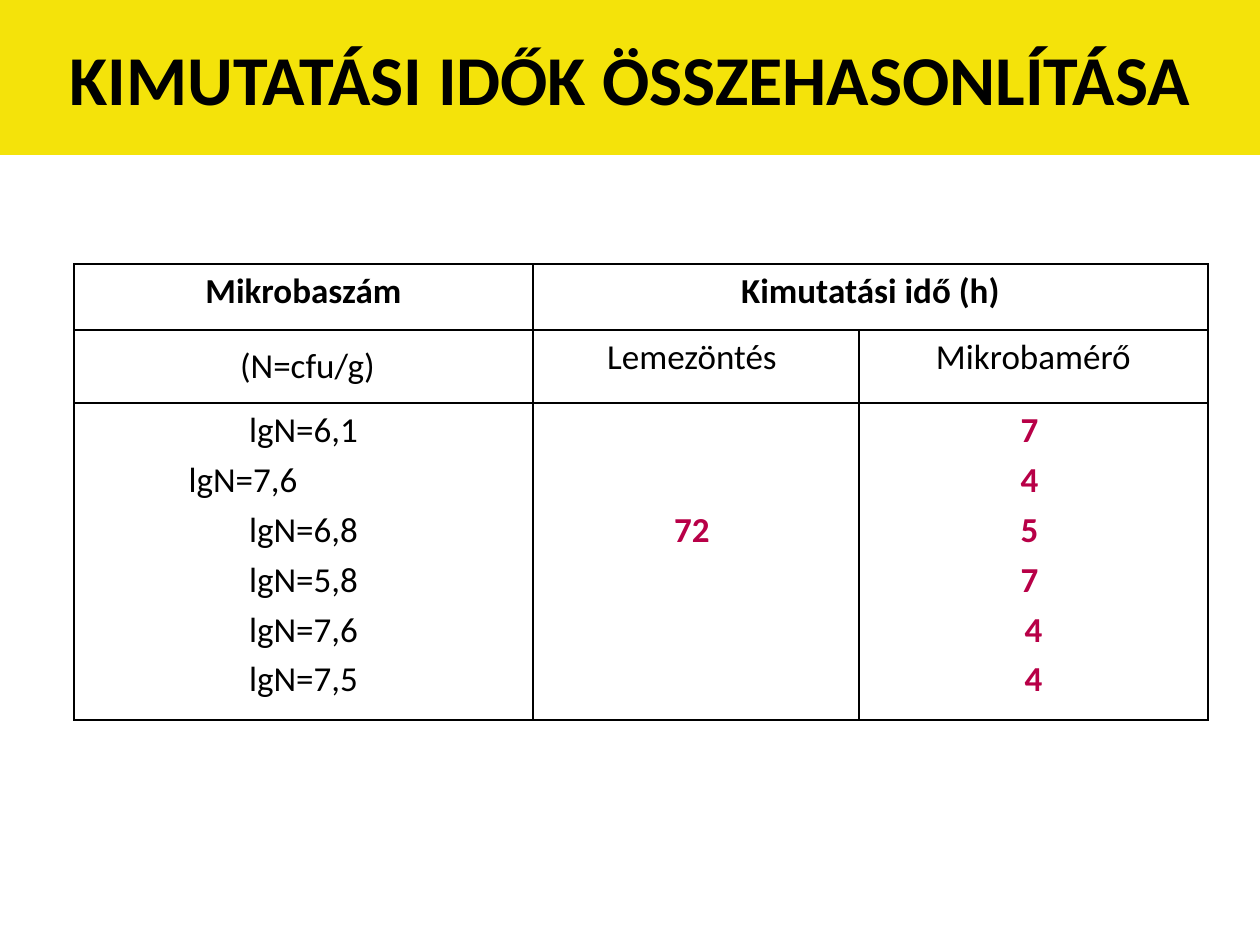
from lxml.etree import SubElement
from pptx import Presentation
from pptx.dml.color import RGBColor
from pptx.enum.shapes import MSO_SHAPE
from pptx.enum.text import MSO_ANCHOR, PP_ALIGN
from pptx.oxml.ns import qn
from pptx.util import Emu, Pt

PX = 914400 // 126
SLIDE_W, SLIDE_H = 1260, 945
FONT = "Calibri"
BLACK, YELLOW, CRIMSON = "000000", "F4E30A", "B80047"
LINE_PITCH = 50
CELL_TOP = 6

COUNTS = ["lgN=6,1", "lgN=7,6", "lgN=6,8", "lgN=5,8", "lgN=7,6", "lgN=7,5"]
HOURS = ["7 ", "4 ", "5 ", "7 ", "4", "4"]


def px(length):
    return Emu(length * PX)


def rgb(color):
    return RGBColor.from_string(color)


def write_line(paragraph, text, size, color=BLACK, bold=False):
    paragraph.alignment = PP_ALIGN.CENTER
    run = paragraph.add_run()
    run.text = text
    font = run.font
    font.name, font.size, font.bold = FONT, Pt(size), bold
    font.color.rgb = rgb(color)


def add_title_band(slide, text):
    band = slide.shapes.add_shape(MSO_SHAPE.RECTANGLE, 0, 0, px(SLIDE_W), px(155))
    band.shadow.inherit = False
    band.fill.solid()
    band.fill.fore_color.rgb = rgb(YELLOW)
    band.line.fill.background()
    band.text_frame.word_wrap = True
    band.text_frame.vertical_anchor = MSO_ANCHOR.MIDDLE
    write_line(band.text_frame.paragraphs[0], text, 40, bold=True)


def add_grid(slide, left, top, widths, heights):
    """Add an unfilled table with thin black borders round every cell."""
    grid = slide.shapes.add_table(
        len(heights), len(widths), px(left), px(top), px(sum(widths)), px(sum(heights))
    ).table
    for column, width in zip(grid.columns, widths):
        column.width = px(width)
    for row, height in zip(grid.rows, heights):
        row.height = px(height)
    for cell in grid.iter_cells():
        draw_borders(cell)
        cell.fill.background()
    return grid


def draw_borders(cell):
    properties = cell._tc.get_or_add_tcPr()
    for side in ("a:lnL", "a:lnR", "a:lnT", "a:lnB"):
        border = SubElement(properties, qn(side), w=str(Pt(1)))
        fill = SubElement(border, qn("a:solidFill"))
        SubElement(fill, qn("a:srgbClr"), val=BLACK)


def fill_cell(cell, lines, color=BLACK, bold=False):
    frame = cell.text_frame
    for index, text in enumerate(lines):
        paragraph = frame.add_paragraph() if index else frame.paragraphs[0]
        if index:
            paragraph.space_before = Pt(4)
        write_line(paragraph, text, 20, color, bold)


def indent_left(paragraph, indent):
    paragraph.alignment = PP_ALIGN.LEFT
    paragraph._p.get_or_add_pPr().set("marL", str(px(indent)))


def main():
    prs = Presentation()
    prs.slide_width, prs.slide_height = px(SLIDE_W), px(SLIDE_H)
    slide = prs.slides.add_slide(prs.slide_layouts[6])

    add_title_band(slide, "KIMUTATÁSI IDŐK ÖSSZEHASONLÍTÁSA")

    times = add_grid(slide, 74, 264, [459, 326, 349], [66, 73, 317])
    times.cell(0, 1).merge(times.cell(0, 2))
    fill_cell(times.cell(0, 0), ["Mikrobaszám"], bold=True)
    fill_cell(times.cell(0, 1), ["Kimutatási idő (h)"], bold=True)

    for column, heading in enumerate([" (N=cfu/g)", "Lemezöntés ", "Mikrobamérő"]):
        fill_cell(times.cell(1, column), [heading])
    times.cell(1, 0).vertical_anchor = MSO_ANCHOR.MIDDLE

    counts, plate_hours, tester_hours = (times.cell(2, column) for column in range(3))
    fill_cell(counts, COUNTS)
    indent_left(counts.text_frame.paragraphs[1], 102)
    fill_cell(plate_hours, ["72 "], CRIMSON, bold=True)
    plate_hours.margin_top = px(CELL_TOP + 2 * LINE_PITCH)
    fill_cell(tester_hours, HOURS, CRIMSON, bold=True)

    prs.save("out.pptx")


if __name__ == "__main__":
    main()
